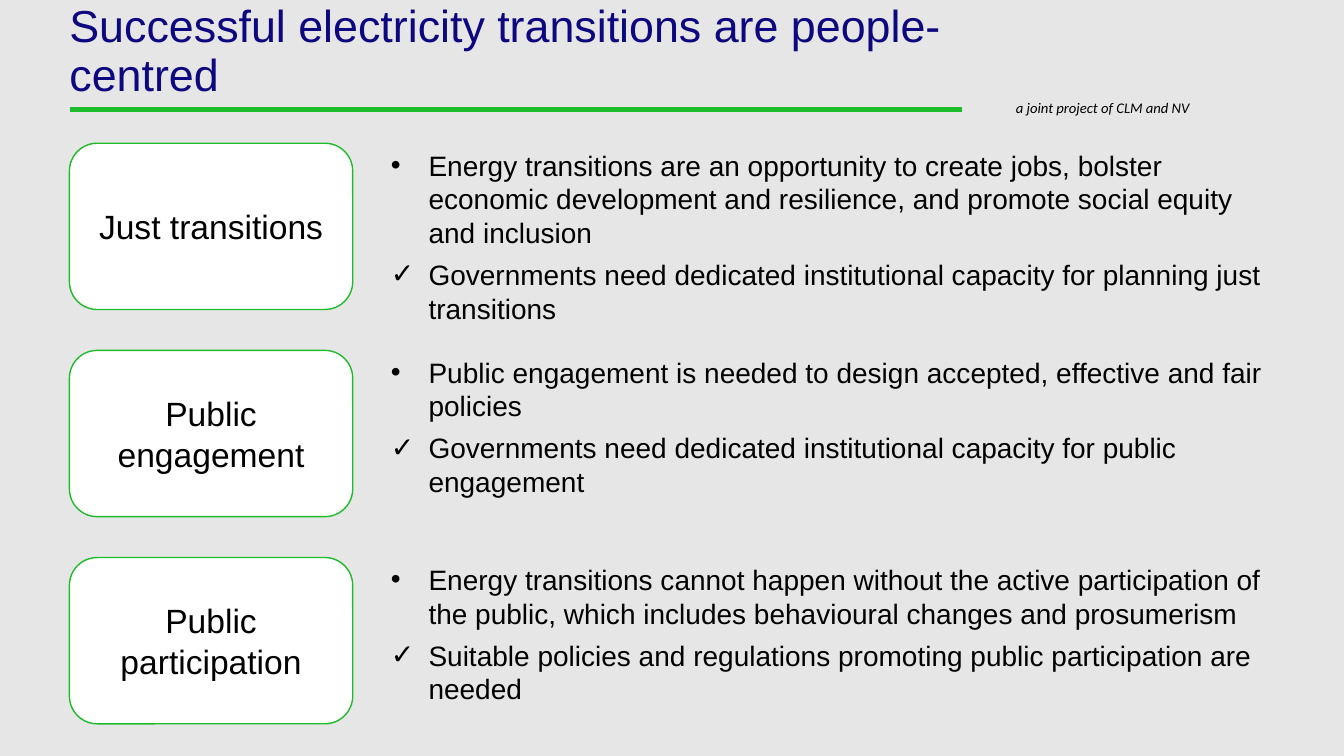
"""Builds the slide on people-centred electricity transitions."""
from lxml.etree import SubElement
from pptx import Presentation
from pptx.dml.color import RGBColor
from pptx.enum.shapes import MSO_SHAPE as Shape
from pptx.enum.text import MSO_ANCHOR as Anchor, PP_ALIGN as Align
from pptx.oxml.ns import qn
from pptx.util import Cm, Pt


def paint(colour_format, hex_colour):
    colour_format.rgb = RGBColor.from_string(hex_colour)


def write(paragraph, text, size, colour="000000", font="Arial", italic=False):
    run = paragraph.add_run()
    run.text = text
    run.font.size = Pt(size)
    run.font.name = font
    run.font.italic = italic
    paint(run.font.color, colour)


GREEN = "1EBC2A"
RULE_GREEN = "1CBC2B"
LEFT, TOP, ROW_STEP = 1.75, 3.61, 5.22
BULLETS_LEFT, BULLETS_WIDTH = 9.6, 22.5
HANGING = Cm(0.95)

themes = [
    ("Just transitions", 4.75,
     "Energy transitions are an opportunity to create jobs, bolster economic "
     "development and resilience, and promote social equity and inclusion",
     "Governments need dedicated institutional capacity for planning just transitions"),
    ("Public engagement", 3.89,
     "Public engagement is needed to design accepted, effective and fair policies",
     "Governments need dedicated institutional capacity for public engagement"),
    ("Public participation", 3.89,
     "Energy transitions cannot happen without the active participation of the "
     "public, which includes behavioural changes and prosumerism",
     "Suitable policies and regulations promoting public participation are needed"),
]

deck = Presentation()
deck.slide_width, deck.slide_height = Cm(33.87), Cm(19.05)
slide = deck.slides.add_slide(deck.slide_layouts[6])
slide.background.fill.solid()
paint(slide.background.fill.fore_color, "E7E6E6")

title_rule = slide.shapes.add_shape(Shape.RECTANGLE, Cm(1.78), Cm(2.71), Cm(22.45), Cm(0.11))
title_rule.shadow.inherit = False
title_rule.fill.solid()
paint(title_rule.fill.fore_color, RULE_GREEN)
paint(title_rule.line.color, RULE_GREEN)
title_rule.line.width = Pt(0.75)

credit = slide.shapes.add_textbox(Cm(25.35), Cm(2.36), Cm(6.17), Cm(0.71)).text_frame
credit.word_wrap = True
write(credit.paragraphs[0], "a joint project of CLM and NV", 10.5, font="Calibri", italic=True)

title = slide.shapes.add_textbox(Cm(LEFT), Cm(0.1), Cm(BULLETS_WIDTH), Cm(2.46)).text_frame
title.word_wrap = True
title.margin_left = title.margin_right = title.margin_top = title.margin_bottom = 0
title.paragraphs[0].line_spacing = 0.9
write(title.paragraphs[0], "Successful electricity transitions are people-centred", 32, "0D0780")

for row, (theme, bullets_height, finding, need) in enumerate(themes):
    top = Cm(TOP + row * ROW_STEP)

    card = slide.shapes.add_shape(Shape.ROUNDED_RECTANGLE, Cm(LEFT), top, Cm(7.14), Cm(4.19))
    card.shadow.inherit = False
    card.fill.solid()
    paint(card.fill.fore_color, "FFFFFF")
    paint(card.line.color, GREEN)
    card.line.width = Pt(1)
    card.text_frame.word_wrap = True
    card.text_frame.vertical_anchor = Anchor.MIDDLE
    label = card.text_frame.paragraphs[0]
    label.alignment = Align.CENTER
    label.space_before = label.space_after = Pt(6)
    write(label, theme, 24)

    points = slide.shapes.add_textbox(
        Cm(BULLETS_LEFT), top, Cm(BULLETS_WIDTH), Cm(bullets_height)).text_frame
    points.word_wrap = True
    points.add_paragraph()
    for point, mark, text in zip(points.paragraphs, "•✓", (finding, need)):
        point.space_after = Pt(6)
        properties = point._p.get_or_add_pPr()
        properties.set("marL", str(HANGING))
        properties.set("indent", str(-HANGING))
        SubElement(properties, qn("a:buFont"), typeface="Arial")
        SubElement(properties, qn("a:buChar"), char=mark)
        write(point, text, 20)

deck.save("out.pptx")
